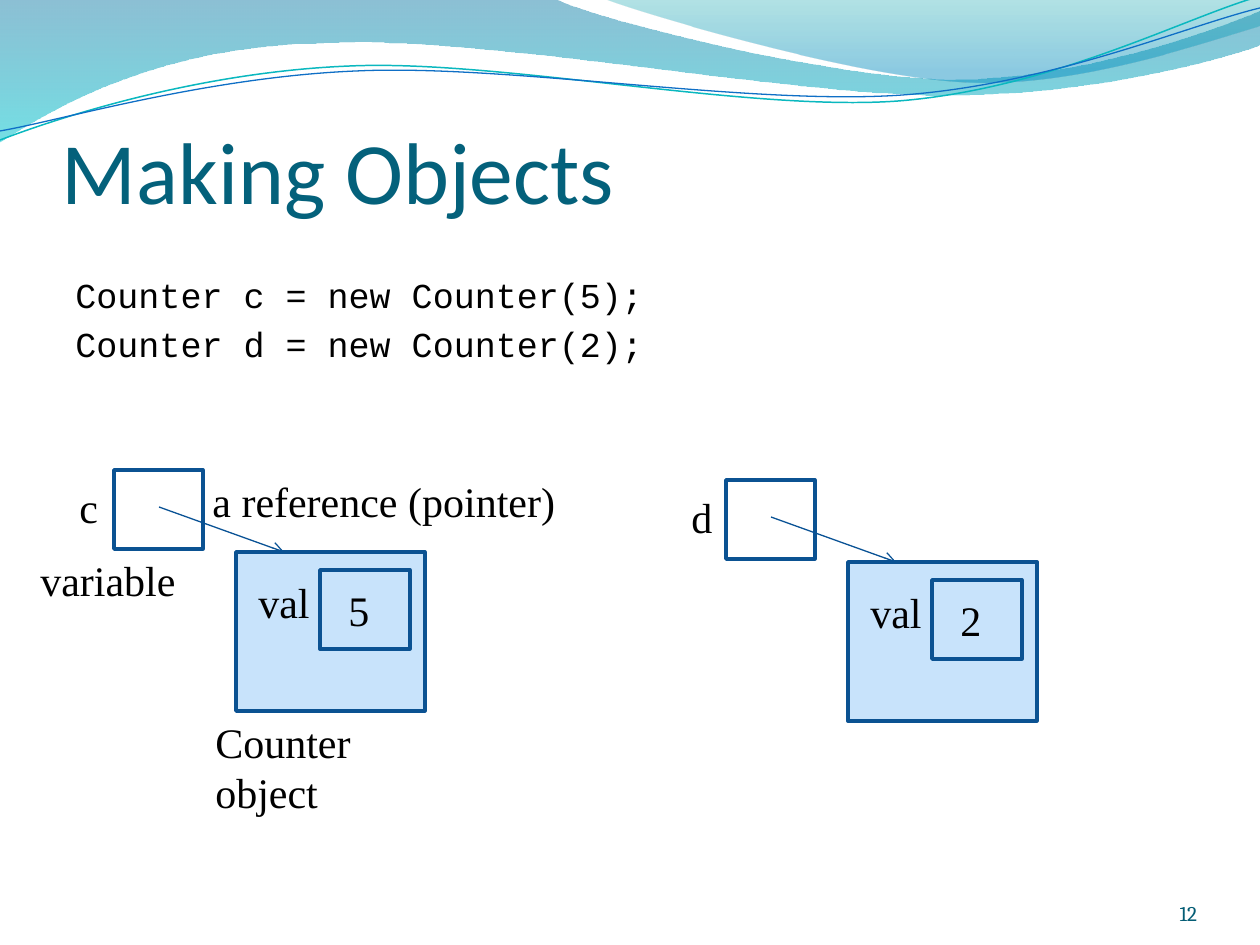
from dataclasses import dataclass

from lxml.etree import SubElement
from pptx import Presentation
from pptx.dml.color import RGBColor
from pptx.enum.shapes import MSO_CONNECTOR, MSO_SHAPE
from pptx.enum.text import MSO_ANCHOR, MSO_AUTO_SIZE, PP_ALIGN
from pptx.oxml.ns import qn
from pptx.util import Pt

SCALE = 914400 / 126
WIDTH, HEIGHT = 1260, 945


@dataclass(frozen=True)
class Theme:
    title: tuple = ("Calibri", 50, "04617B")
    code: tuple = ("Courier New", 20, "000000")
    label: tuple = ("Times New Roman", 24, "000000")
    number: tuple = ("Cambria", 12, "045D75")
    edge: str = "0B5292"
    arrow: str = "095295"
    object: str = "C8E3FB"
    teal: str = "0AB8BF"
    blue: str = "0F6FC6"
    wave: tuple = ((0, "0074A1", 45), (1, "00C6CF", 55))
    crest: tuple = ((0, "00A1A9", 30), (0.8, "008BBF", 45))


THEME = Theme()


def emu(px):
    return round(px * SCALE)


def rgb(code):
    return RGBColor.from_string(code)


def add_curve(slide, start, parts, close):
    """Draw straight (2 numbers) and cubic (6 numbers) parts as one outline."""
    points = [part[i:i + 2] for part in parts for i in range(0, len(part), 2)]
    build = slide.shapes.build_freeform(*map(emu, start), scale=1.0)
    build.add_line_segments([(emu(x), emu(y)) for x, y in points], close=close)
    shape = build.convert_to_shape()
    shape.shadow.inherit = False
    nodes = iter(list(shape.element.iter(qn("a:lnTo"))))
    for part in parts:
        first = next(nodes)
        if len(part) == 6:
            cubic = SubElement(first.getparent(), qn("a:cubicBezTo"))
            first.addprevious(cubic)
            for node in (first, next(nodes), next(nodes)):
                cubic.append(node[0])
                node.getparent().remove(node)
    return shape


def add_band(slide, start, parts, stops):
    """Add a closed shape with a see-through gradient from top to bottom."""
    band = add_curve(slide, start, parts, True)
    band.line.fill.background()
    band.fill.gradient()
    band.fill.gradient_angle = 270
    for stop, (place, color, _) in zip(band.fill.gradient_stops, stops):
        stop.position = place
        stop.color.rgb = rgb(color)
    for node, (_, _, alpha) in zip(band.element.iter(qn("a:srgbClr")), stops):
        SubElement(node, qn("a:alpha")).set("val", str(alpha * 1000))


def add_strand(slide, start, parts, color, width):
    strand = add_curve(slide, start, parts, False)
    strand.fill.background()
    strand.line.color.rgb = rgb(color)
    strand.line.width = Pt(width)


def add_waves(slide):
    add_band(slide, (0, 0), [
        (554, -1), (600, 21, 837, 79, 955, 79), (1074, 79, 1207, 33, 1260, 11),
        (1260, 45), (1235, 55, 1096, 96, 940, 95), (783, 95, 481, 35, 324, 43),
        (163, 45, 58, 105, -1, 142)], THEME.wave)
    add_band(slide, (604, -1), [
        (641, 14, 859, 78, 969, 82), (1079, 87, 1211, 40, 1260, 26),
        (1260, 0)], THEME.crest)
    add_strand(slide, (0, 140), [
        (60, 117, 199, 72, 349, 66), (498, 59, 747, 112, 898, 101),
        (1050, 89, 1182, 19, 1257, -3)], THEME.teal, 0.85)
    add_strand(slide, (0, 131), [
        (59, 121, 207, 77, 357, 71), (508, 64, 752, 106, 903, 95),
        (1053, 84, 1186, 26, 1260, 8)], THEME.blue, 0.75)


def add_text(slide, box, lines, style, wrap=True, gap=0):
    name, size, color = style
    frame = slide.shapes.add_textbox(*map(emu, box)).text_frame
    frame.text = "\n".join(lines)
    frame.word_wrap = wrap
    for para in frame.paragraphs:
        para.space_before = Pt(gap)
        for run in para.runs:
            run.font.name = name
            run.font.size = Pt(size)
            run.font.color.rgb = rgb(color)
    return frame


def add_title(slide, box, text):
    frame = add_text(slide, box, [text], THEME.title)
    frame.vertical_anchor = MSO_ANCHOR.BOTTOM
    frame.margin_left = frame.margin_right = frame.margin_bottom = 0


def add_number(slide, box, text):
    frame = add_text(slide, box, [text], THEME.number)
    frame.vertical_anchor = MSO_ANCHOR.BOTTOM
    frame.margin_left = frame.margin_right = 0
    frame.margin_top = frame.margin_bottom = 0
    frame.paragraphs[0].alignment = PP_ALIGN.RIGHT


def add_label(slide, box, *lines):
    frame = add_text(slide, box, lines, THEME.label, wrap=False)
    frame.auto_size = MSO_AUTO_SIZE.SHAPE_TO_FIT_TEXT


def add_box(slide, box, fill=None):
    shape = slide.shapes.add_shape(MSO_SHAPE.RECTANGLE, *map(emu, box))
    shape.shadow.inherit = False
    if fill:
        shape.fill.solid()
        shape.fill.fore_color.rgb = rgb(fill)
    else:
        shape.fill.background()
    shape.line.color.rgb = rgb(THEME.edge)
    shape.line.width = Pt(2)


def add_arrow(slide, *ends):
    arrow = slide.shapes.add_connector(MSO_CONNECTOR.STRAIGHT, *map(emu, ends))
    arrow.line.color.rgb = rgb(THEME.arrow)
    arrow.line.width = Pt(0.75)
    line = arrow.element.spPr.find(qn("a:ln"))
    SubElement(line, qn("a:tailEnd")).set("type", "arrow")
    SubElement(arrow.element.spPr, qn("a:effectLst"))


def add_counter(slide, left, top, name, value):
    """Draw a variable that points to its Counter object."""
    add_box(slide, (left + 169, top + 82, 189, 159), THEME.object)
    add_box(slide, (left + 253, top + 100, 90, 79))
    add_label(slide, (left + 179, top + 100, 77, 63), "val")
    add_box(slide, (left + 47, top, 89, 79))
    add_label(slide, (left, top + 5, 45, 63), name)
    add_arrow(slide, left + 92, top + 37, left + 217, top + 82)
    add_label(slide, (left + 269, top + 108, 47, 63), value)


def main():
    deck = Presentation()
    deck.slide_width, deck.slide_height = emu(WIDTH), emu(HEIGHT)
    slide = deck.slides.add_slide(deck.slide_layouts[6])
    add_waves(slide)
    add_title(slide, (62, 64, 1134, 158), "Making Objects")
    code = [f"Counter {name} = new Counter({value});" for name, value in ("c5", "d2")]
    add_text(slide, (63, 267, 765, 115), code, THEME.code, gap=4)
    add_counter(slide, 67, 470, "c", "5")
    add_counter(slide, 679, 480, "d", "2")
    add_label(slide, (200, 469, 372, 63), "a reference (pointer)")
    add_label(slide, (28, 548, 161, 63), "variable")
    add_label(slide, (203, 710, 163, 115), "Counter", "object")
    add_number(slide, (1092, 876, 105, 50), "12")
    deck.save("out.pptx")


if __name__ == "__main__":
    main()
